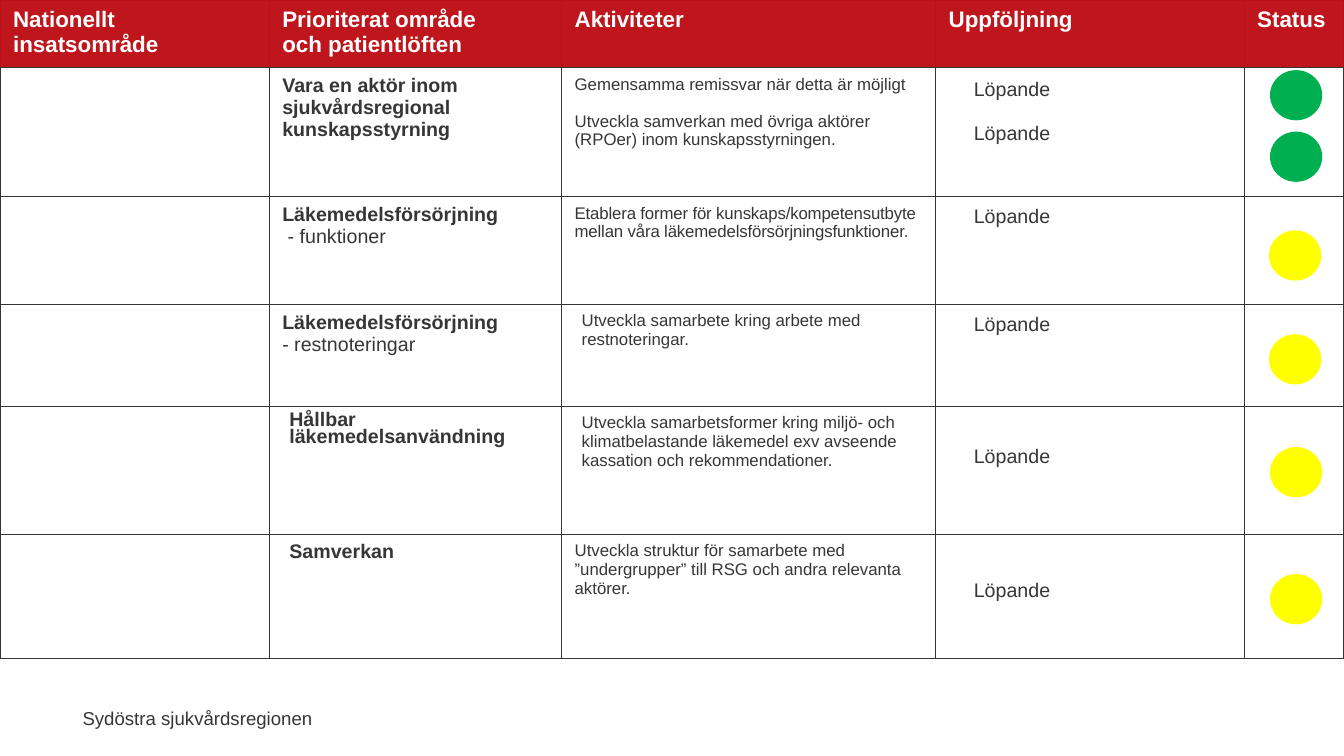
from pptx import Presentation
from pptx.dml.color import RGBColor as Rgb
from pptx.enum.shapes import MSO_SHAPE as Shape
from pptx.enum.text import PP_ALIGN as Align
from pptx.oxml import parse_xml
from pptx.oxml.ns import nsdecls
from pptx.util import Inches, Pt

HUES = {"red": "BE161C", "edge": "BC1018", "dark": "363636",
        "white": "FFFFFF", "green": "00B050", "yellow": "FFFF00"}

COLS = [2.67, 2.9, 3.71, 3.06, 0.99]
ROWS = [0.67, 1.28, 1.07, 1.01, 1.27, 1.23]
HEADS = ["Nationellt insatsområde", "Prioriterat område \voch patientlöften",
         "Aktiviteter", "Uppföljning", "Status"]

# Each area: lines of (text, bold, options), then lines of its activities
AREAS = [
    ([("Vara en aktör inom sjukvårdsregional kunskapsstyrning", True, {})],
     [("Gemensamma remissvar när detta är möjligt", False, {}),
      ("Utveckla samverkan med övriga aktörer (RPOer) inom "
       "kunskapsstyrningen.", False, {"before": 13})]),
    ([("Läkemedelsförsörjning", True, {}), (" - funktioner", False, {})],
     [("Etablera former för kunskaps/kompetensutbyte mellan våra "
       "läkemedelsförsörjningsfunktioner.", False, {"track": -10})]),
    ([("Läkemedelsförsörjning", True, {}), ("- restnoteringar", False, {})],
     [("Utveckla samarbete kring arbete med restnoteringar.", False,
       {"indent": 0.07})]),
    ([("Hållbar läkemedelsanvändning", True,
       {"indent": 0.07, "lead": Pt(12.3)})],
     [("Utveckla samarbetsformer kring miljö- och klimatbelastande läkemedel "
       "exv avseende kassation och rekommendationer.", False,
       {"indent": 0.07})]),
    ([("Samverkan", True, {"indent": 0.07, "lead": 0.99})],
     [("Utveckla struktur för samarbete med ”undergrupper” till RSG och "
       "andra relevanta aktörer.", False, {})]),
]

# Status dots: left, top, hue; follow-up labels: top
DOTS = [(12.61, 0.71, "green"), (12.61, 1.32, "green"),
        (12.6, 2.3, "yellow"), (12.6, 3.33, "yellow"),
        (12.61, 4.45, "yellow"), (12.61, 5.71, "yellow")]
NOTES = [0.71, 1.15, 1.97, 3.05, 4.36, 5.68]


def color(name):
    return Rgb.from_string(HUES[name])


def add_run(para, text, size, hue="dark", bold=False):
    run = para.add_run()
    run.text = text
    font = run.font
    font.name, font.size, font.bold = "Arial", Pt(size), bold
    font.color.rgb = color(hue)
    return run


def write(frame, lines, size, hue="dark"):
    for i, (text, bold, opts) in enumerate(lines):
        para = frame.add_paragraph() if i else frame.paragraphs[0]
        if "before" in opts:
            para.space_before = Pt(opts["before"])
        if "lead" in opts:
            para.line_spacing = opts["lead"]
        if "indent" in opts:
            para._p.get_or_add_pPr().set("marL", str(Inches(opts["indent"])))
        for j, part in enumerate(text.split("\v")):
            if j:
                para.add_line_break()
            run = add_run(para, part, size, hue, bold)
            if "track" in opts:
                run._r.get_or_add_rPr().set("spc", str(opts["track"]))


def style(cell, head):
    # Borders go before the fill
    props = cell._tc.get_or_add_tcPr()
    for side in "LRTB":
        hue, wide = ("edge", 0.75) if head and side != "B" else ("dark", 1)
        props.append(parse_xml(
            f'<a:ln{side} {nsdecls("a")} w="{Pt(wide)}"><a:solidFill>'
            f'<a:srgbClr val="{HUES[hue]}"/></a:solidFill></a:ln{side}>'))
    cell.fill.solid()
    cell.fill.fore_color.rgb = color("red" if head else "white")
    cell.margin_left = cell.margin_right = Inches(0.13)
    cell.margin_top = cell.margin_bottom = Inches(0.07)


def add_grid(slide, left, top):
    grid = slide.shapes.add_table(
        len(ROWS), len(COLS), Inches(left), Inches(top),
        Inches(sum(COLS)), Inches(sum(ROWS))).table
    grid.first_row = grid.horz_banding = False
    for col, wide in zip(grid.columns, COLS):
        col.width = Inches(wide)
    for i, (row, high) in enumerate(zip(grid.rows, ROWS)):
        row.height = Inches(high)
        for cell in row.cells:
            style(cell, i == 0)
    for i, head in enumerate(HEADS):
        write(grid.cell(0, i).text_frame, [(head, True, {})], 16, "white")
    for i, (area, tasks) in enumerate(AREAS, 1):
        write(grid.cell(i, 1).text_frame, area, 14)
        write(grid.cell(i, 2).text_frame, tasks, 12)


def add_dot(slide, left, top, hue):
    dot = slide.shapes.add_shape(Shape.OVAL, Inches(left), Inches(top),
                                 Inches(0.49), Inches(0.47))
    dot.shadow.inherit = False
    dot.fill.solid()
    dot.fill.fore_color.rgb = dot.line.color.rgb = color(hue)
    dot.line.width = Pt(2)


def add_label(slide, box, text, size, align=Align.LEFT):
    frame = slide.shapes.add_textbox(*map(Inches, box)).text_frame
    frame.word_wrap = False
    para = frame.paragraphs[0]
    para.alignment = align
    add_run(para, text, size)


def main():
    deck = Presentation()
    deck.slide_width, deck.slide_height = Inches(13.33), Inches(7.5)
    slide = deck.slides.add_slide(deck.slide_layouts[6])
    # Footer
    add_label(slide, (0.7, 6.96, 2.5, 0.33), "Sydöstra sjukvårdsregionen",
              13.3, Align.RIGHT)
    # Plan table
    add_grid(slide, 0, 0)
    # Status and follow-up
    for dot in DOTS:
        add_dot(slide, *dot)
    for top in NOTES:
        add_label(slide, (9.56, top, 0.96, 0.34), "Löpande", 14)
    deck.save("out.pptx")


if __name__ == "__main__":
    main()
